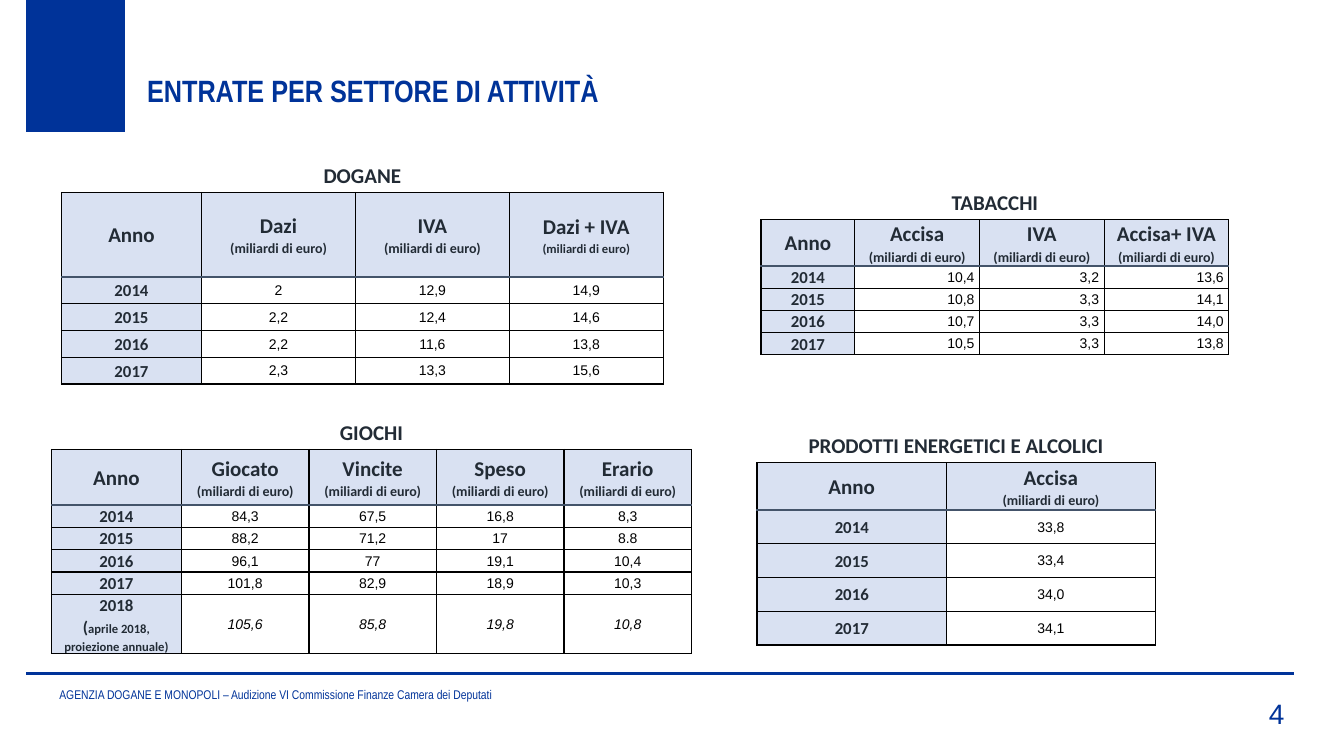
import pptx
import pptx.dml.color
import pptx.enum.shapes
import pptx.enum.text
import pptx.oxml
import pptx.oxml.ns
import pptx.util

ALIGN = pptx.enum.text.PP_ALIGN
ANCHOR = pptx.enum.text.MSO_ANCHOR
GRID = pptx.util.Inches(0.1)  # the slide is 133.33 columns by 75 rows
INSET = pptx.util.Inches(0.05)

THEME = {
    "blue": "003399",
    "header_fill": "D9E1F2",
    "border": ("000000", 1),
    "header_rule": ("44546A", 1.5),
    # name: font, size, colour, bold, italic
    "styles": {
        "title": ("Arial Narrow", 22, "003399", True, False),
        "footer": ("Arial Narrow", 9, "003399", False, False),
        "number": ("Arial", 20, "003399", False, False),
        "heading": ("Calibri", 15, "222B35", True, False),
        "unit": ("Calibri", 10, "222B35", True, False),
        "note": ("Calibri", 9, "222B35", True, False),
        "year": ("Calibri", 12, "222B35", True, False),
        "value": ("Arial", 10, "000000", False, False),
        "forecast": ("Arial", 10, "000000", False, True),
    },
}


def write(frame, paragraphs, align=ALIGN.CENTER, spacing=None):
    """Fill a frame; each paragraph is a list of (text, style), "\\n" ending a line."""
    for index, spans in enumerate(paragraphs):
        para = frame.add_paragraph() if index else frame.paragraphs[0]
        para.alignment = align
        para.line_spacing = spacing
        targets = [(para, spans[0][1])]
        for text, style in spans:
            span = para.add_run()
            span.text = text.rstrip("\n")
            if text.endswith("\n"):
                para.add_line_break()
            if style != spans[0][1]:
                targets.append((span, style))
        for target, style in targets:
            name, size, colour, bold, italic = THEME["styles"][style]
            target.font.name = name
            target.font.size = pptx.util.Pt(size)
            target.font.color.rgb = pptx.dml.color.RGBColor.from_string(colour)
            target.font.bold, target.font.italic = bold, italic


def add_label(page, area, text, style, align, anchor):
    box = page.shapes.add_textbox(*(round(length * GRID) for length in area))
    box.text_frame.word_wrap = True
    box.text_frame.vertical_anchor = anchor
    write(box.text_frame, [[(text, style)]], align)
    return box


deck = pptx.Presentation()
deck.slide_width = round(133.33 * GRID)
deck.slide_height = 75 * GRID
page = deck.slides.add_slide(deck.slide_layouts[5])
blue = pptx.dml.color.RGBColor.from_string(THEME["blue"])

block = page.shapes.add_shape(pptx.enum.shapes.MSO_SHAPE.RECTANGLE,
                              round(2.6 * GRID), 0, round(9.8 * GRID), round(13.1 * GRID))
block.shadow.inherit = False
block.fill.solid()
block.fill.fore_color.rgb = blue
block.line.fill.background()

rule = page.shapes.add_connector(pptx.enum.shapes.MSO_CONNECTOR.STRAIGHT,
                                 *(round(n * GRID) for n in (2.6, 66.8, 128.4, 66.8)))
rule.line.color.rgb = blue
rule.line.width = pptx.util.Pt(2.25)
rule._element.spPr.append(pptx.oxml.parse_xml(
    f"<a:effectLst {pptx.oxml.ns.nsdecls('a')}/>"))

title = page.shapes.title
title.left, title.top, title.width, title.height = (
    round(n * GRID) for n in (13.6, 6.6, 117.4, 4.7))
title.text_frame.auto_size = pptx.enum.text.MSO_AUTO_SIZE.NONE
title.text_frame.vertical_anchor = ANCHOR.TOP
write(title.text_frame, [[("ENTRATE PER SETTORE DI ATTIVITÀ", "title")]], ALIGN.LEFT)

# Areas are left, top, width; sizes are year column width, header height, row height.
# A heading that ends in a line break keeps its unit in the same paragraph.
sectors = [
    dict(name="DOGANE", area=(6.1, 19.1, 59.7), sizes=(13.9, 8.4, 2.65), align=ALIGN.CENTER,
         headings=[("Dazi", "unit"), ("IVA", "unit"), ("Dazi + IVA\n", "note")],
         rows=["2014 2 12,9 14,9", "2015 2,2 12,4 14,6",
               "2016 2,2 11,6 13,8", "2017 2,3 13,3 15,6"]),
    dict(name="PRODOTTI ENERGETICI E ALCOLICI", area=(75.1, 45.9, 39.5),
         sizes=(18.8, 4.7, 3.35), align=ALIGN.CENTER,
         headings=[("Accisa", "unit")],
         rows=["2014 33,8", "2015 33,4", "2016 34,0", "2017 34,1"]),
    dict(name="GIOCHI", area=(5.1, 44.6, 63.5), sizes=(12.9, 5.5, 2.22), align=ALIGN.CENTER,
         headings=[(name, "unit") for name in ("Giocato", "Vincite", "Speso", "Erario")],
         rows=["2014 84,3 67,5 16,8 8,3", "2015 88,2 71,2 17 8.8",
               "2016 96,1 77 19,1 10,4", "2017 101,8 82,9 18,9 10,3",
               "2018 105,6 85,8 19,8 10,8"]),
    dict(name="TABACCHI", area=(75.5, 21.8, 46.4), sizes=(9.3, 4.6, 2.2), align=ALIGN.RIGHT,
         headings=[(name, "unit") for name in ("Accisa\n", "IVA\n", "Accisa+ IVA\n")],
         rows=["2014 10,4 3,2 13,6", "2015 10,8 3,3 14,1",
               "2016 10,7 3,3 14,0", "2017 10,5 3,3 13,8"]),
]
forecast_year = "2018"
forecast_note = [("(", "year"), ("aprile 2018, proiezione annuale)", "note")]
forecast_height = 5.9

for sector in sectors:
    left, top, width = sector["area"]
    year_width, header_height, row_height = sector["sizes"]
    add_label(page, (left, top - 3.5, width, 3.5), sector["name"], "heading",
              ALIGN.CENTER, ANCHOR.MIDDLE)

    header = [[[("Anno", "heading")]]]
    for name, unit_style in sector["headings"]:
        spans = [(name, "heading"), ("(miliardi di euro)", unit_style)]
        header.append([spans] if name.endswith("\n") else [[span] for span in spans])
    content, heights = [header], [header_height]
    for row in sector["rows"]:
        year, *values = row.split()
        is_forecast = year == forecast_year
        year_cell = [[(year, "year")]] + ([forecast_note] if is_forecast else [])
        style = "forecast" if is_forecast else "value"
        content.append([year_cell] + [[[(value, style)]] for value in values])
        heights.append(forecast_height if is_forecast else row_height)

    columns = len(header)
    table = page.shapes.add_table(
        len(content), columns,
        *(round(n * GRID) for n in (left, top, width, sum(heights)))).table
    table.first_row = table.horz_banding = False
    for index, column in enumerate(table.columns):
        share = year_width if index == 0 else (width - year_width) / (columns - 1)
        column.width = round(share * GRID)
    for row, height in zip(table.rows, heights):
        row.height = round(height * GRID)

    for r, cells in enumerate(content):
        for c, paragraphs in enumerate(cells):
            cell = table.cell(r, c)
            cell.margin_left = cell.margin_right = INSET
            cell.margin_top = cell.margin_bottom = 0
            cell.vertical_anchor = ANCHOR.MIDDLE
            for side in "LRTB":
                under_header = (r, side) in ((0, "B"), (1, "T"))
                colour, points = THEME["header_rule" if under_header else "border"]
                cell._tc.get_or_add_tcPr().append(pptx.oxml.parse_xml(
                    f'<a:ln{side} {pptx.oxml.ns.nsdecls("a")} w="{pptx.util.Pt(points)}">'
                    f'<a:solidFill><a:srgbClr val="{colour}"/></a:solidFill></a:ln{side}>'))
            is_label = r == 0 or c == 0
            if is_label:
                cell.fill.solid()
                cell.fill.fore_color.rgb = pptx.dml.color.RGBColor.from_string(
                    THEME["header_fill"])
            else:
                cell.fill.background()
            write(cell.text_frame, paragraphs,
                  ALIGN.CENTER if is_label else sector["align"], 1.07)

add_label(page, (4.9, 66.1, 94.5, 4),
          "AGENZIA DOGANE E MONOPOLI – Audizione VI Commissione Finanze Camera dei Deputati",
          "footer", ALIGN.LEFT, ANCHOR.BOTTOM)
number = add_label(page, (116.8, 67.1, 11.6, 5.4), "4", "number", ALIGN.RIGHT, ANCHOR.BOTTOM)
number.text_frame.margin_bottom = pptx.util.Inches(0.01)

deck.save("out.pptx")
